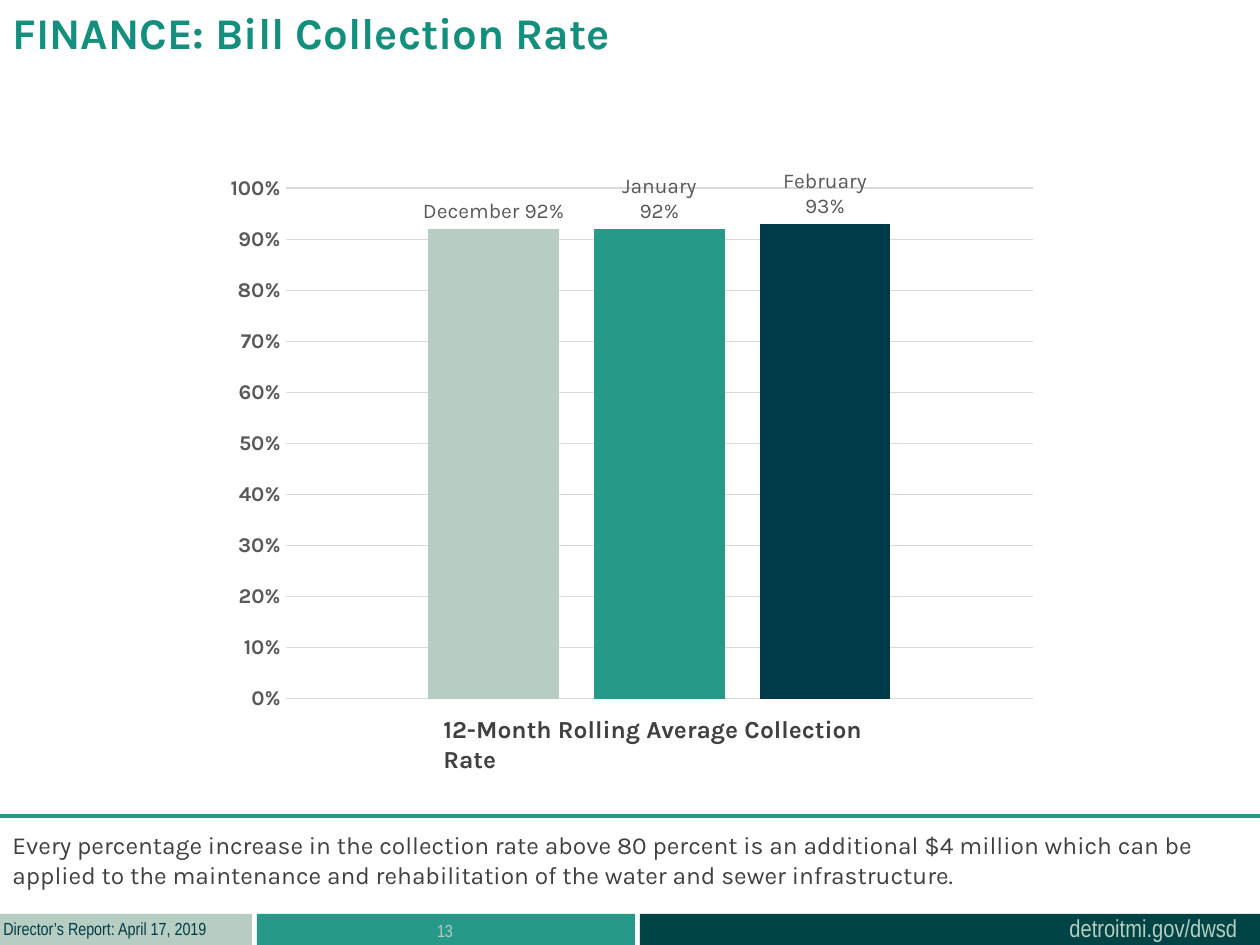
from dataclasses import dataclass

from lxml import etree
from pptx import Presentation
from pptx import util as u
from pptx.chart import data as chart_data
from pptx.dml import color
from pptx.enum import chart as ch
from pptx.enum import shapes, text
from pptx.oxml import ns

EMU_PER_PX = 914400 / 126
COLORS = {
    "sage": "B7CDC2", "teal": "279989", "navy": "003B49", "pine": "004445",
    "title": "138F7E", "body": "404040", "axis": "595959", "grid": "D9D9D9",
}


@dataclass
class Band:
    left: int
    width: int
    fill: str


@dataclass
class Label:
    words: str
    left: int
    top: int
    width: int
    height: int
    size: int
    ink: str
    face: str = "Karla"
    bold: bool = False
    wrap: bool = True
    align: text.PP_ALIGN = text.PP_ALIGN.LEFT


@dataclass
class Month:
    series: str
    rate: float
    caption: str
    fill: str


BANDS = [Band(257, 378, "teal"), Band(640, 620, "pine"), Band(0, 252, "sage")]

LABELS = [
    Label("detroitmi.gov/dwsd", 1057, 907, 195, 43, 14, "sage", "Arial Narrow", wrap=False),
    Label("Director’s Report: April 17, 2019", -9, 912, 234, 34, 10, "navy",
          "Arial Narrow", wrap=False),
    Label("13", 256, 914, 378, 31, 10, "sage", "Arial Narrow", align=text.PP_ALIGN.CENTER),
    Label("FINANCE: Bill Collection Rate", 0, 0, 956, 97, 25, "title", bold=True),
    Label("Every percentage increase in the collection rate above 80 percent is an "
          "additional $4 million which can be applied to the maintenance and "
          "rehabilitation of the water and sewer infrastructure.",
          0, 824, 1260, 72, 14, "body"),
    Label("12-Month Rolling Average Collection Rate", 431, 708, 457, 43, 14, "body", bold=True),
]

MONTHS = [
    Month("December", 0.92, "December 92%", "sage"),
    Month("January", 0.92, "January\n92%", "teal"),
    Month("Series 3", 0.93, "February\n93%", "navy"),
]


def px(length: int) -> u.Emu:
    return u.Emu(round(length * EMU_PER_PX))


def rgb(name: str) -> color.RGBColor:
    return color.RGBColor.from_string(COLORS[name])


def style_font(font, size: int, ink: str, face: str = "Karla", bold: bool = False) -> None:
    font.size = u.Pt(size)
    font.name = face
    font.bold = bold
    font.color.rgb = rgb(ink)


def draw_band(slide, band: Band) -> None:
    bar = slide.shapes.add_shape(shapes.MSO_SHAPE.RECTANGLE,
                                 px(band.left), px(914), px(band.width), px(31))
    bar.shadow.inherit = False
    bar.fill.solid()
    bar.fill.fore_color.rgb = rgb(band.fill)
    bar.line.fill.background()


def draw_label(slide, label: Label) -> None:
    box = slide.shapes.add_textbox(px(label.left), px(label.top),
                                   px(label.width), px(label.height))
    frame = box.text_frame
    frame.word_wrap = label.wrap
    frame.text = label.words
    paragraph = frame.paragraphs[0]
    paragraph.alignment = label.align
    style_font(paragraph.font, label.size, label.ink, label.face, label.bold)


def draw_divider(slide) -> None:
    divider = slide.shapes.add_connector(shapes.MSO_CONNECTOR.STRAIGHT,
                                         px(1260), px(816), px(0), px(816))
    divider.line.color.rgb = rgb("teal")
    divider.line.width = u.Pt(2.25)
    etree.SubElement(divider._element.spPr, ns.qn("a:effectLst"))


def fix_plot_area(chart, left: float, top: float, width: float, height: float) -> None:
    plot_area = chart._chartSpace.chart.plotArea
    for old in plot_area.findall(ns.qn("c:layout")):
        plot_area.remove(old)
    layout = etree.Element(ns.qn("c:layout"))
    manual = etree.SubElement(layout, ns.qn("c:manualLayout"))
    settings = {"layoutTarget": "inner", "xMode": "edge", "yMode": "edge",
                "x": left, "y": top, "w": width, "h": height}
    for tag, value in settings.items():
        etree.SubElement(manual, ns.qn(f"c:{tag}")).set("val", str(value))
    plot_area.insert(0, layout)


def draw_rate_chart(slide, months: list[Month]) -> None:
    rates = chart_data.CategoryChartData(number_format="0%")
    rates.categories = ["12-Monthl Rolling Average"]
    for month in months:
        rates.add_series(month.series, [month.rate])
    chart = slide.shapes.add_chart(ch.XL_CHART_TYPE.COLUMN_CLUSTERED,
                                   px(210), px(166), px(840), px(555), rates).chart
    chart.has_title = False
    chart.has_legend = False
    style_font(chart.font, 12, "axis")
    fix_plot_area(chart, 0.09, 0.04, 0.89, 0.92)

    # Axes
    chart.category_axis.visible = False
    percent = chart.value_axis
    percent.minimum_scale, percent.maximum_scale, percent.major_unit = 0, 1, 0.1
    percent.major_tick_mark = ch.XL_TICK_MARK.NONE
    percent.minor_tick_mark = ch.XL_TICK_MARK.NONE
    percent.format.line.fill.background()
    percent.tick_labels.number_format = "0%"
    percent.tick_labels.number_format_is_linked = False
    style_font(percent.tick_labels.font, 12, "axis", bold=True)
    percent.major_gridlines.format.line.color.rgb = rgb("grid")
    percent.major_gridlines.format.line.width = u.Pt(0.75)

    # Bars and their captions
    plot = chart.plots[0]
    plot.gap_width, plot.overlap, plot.vary_by_categories = 219, -27, False
    for month, bar in zip(months, plot.series):
        bar.format.fill.solid()
        bar.format.fill.fore_color.rgb = rgb(month.fill)
        caption = bar.points[0].data_label
        caption.text_frame.text = month.caption
        caption.position = ch.XL_LABEL_POSITION.OUTSIDE_END
        for paragraph in caption.text_frame.paragraphs:
            for run in paragraph.runs:
                style_font(run.font, 12, "axis")


def main() -> None:
    deck = Presentation()
    deck.slide_width, deck.slide_height = px(1260), px(945)
    slide = deck.slides.add_slide(deck.slide_layouts[6])

    # Footer bands first, so that the text lies over them
    for band in BANDS:
        draw_band(slide, band)
    draw_rate_chart(slide, MONTHS)
    draw_divider(slide)
    for label in LABELS:
        draw_label(slide, label)
    deck.save("out.pptx")


if __name__ == "__main__":
    main()
